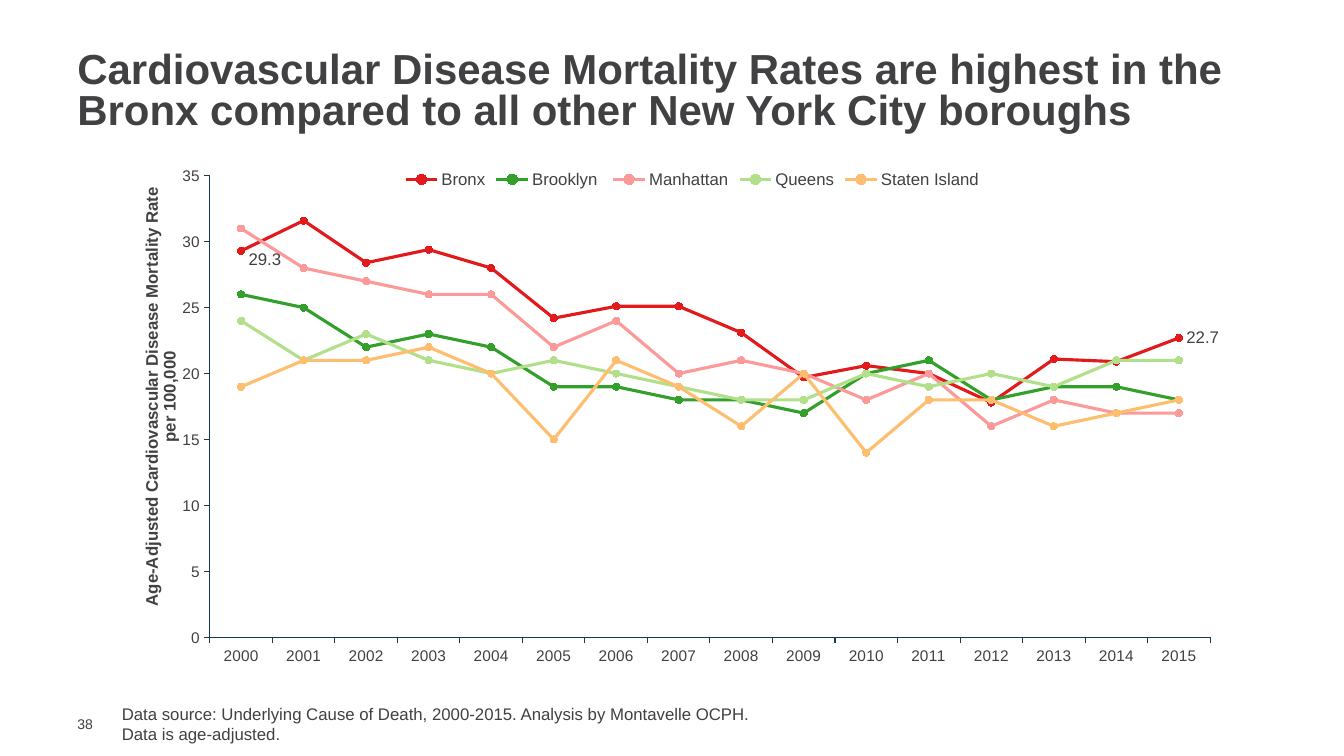
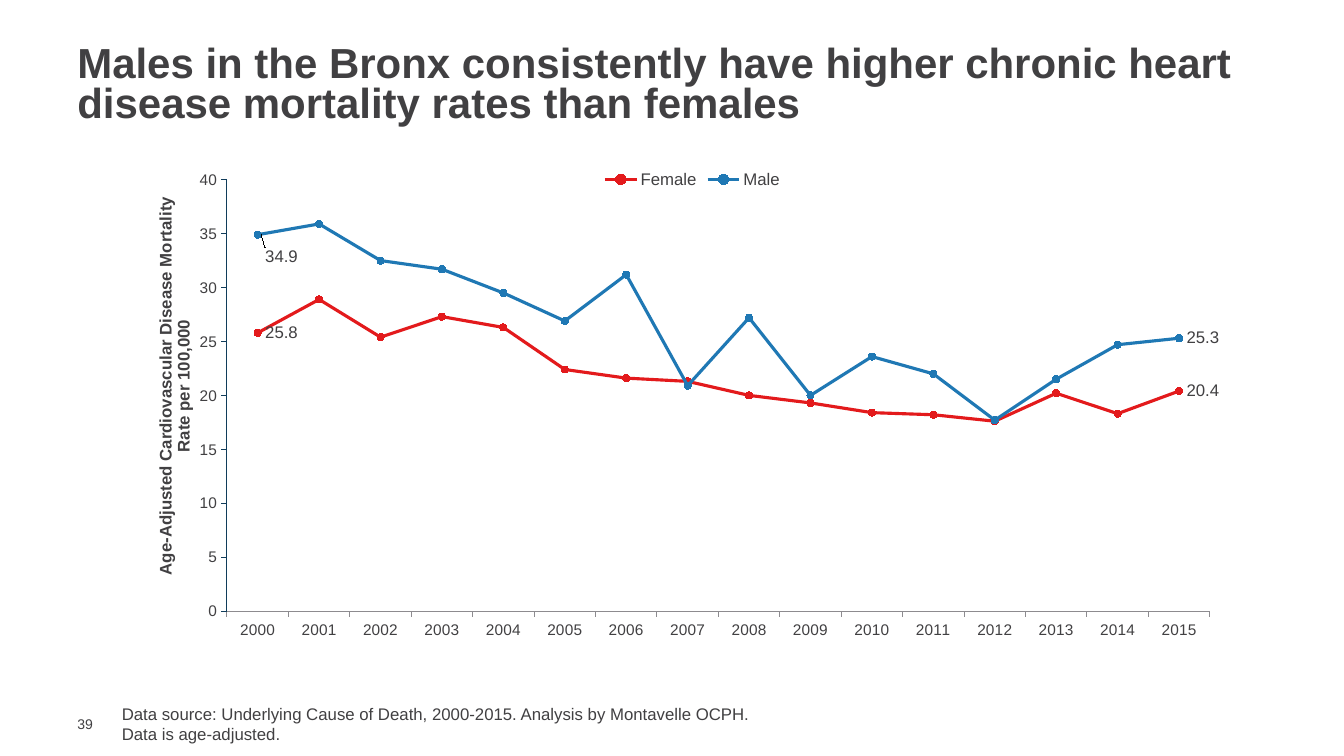
from lxml.etree import SubElement
from pptx import Presentation
from pptx.chart.data import CategoryChartData as ChartData
from pptx.dml.color import RGBColor
from pptx.enum.chart import (XL_CHART_TYPE as Kind, XL_LABEL_POSITION as Side,
                             XL_LEGEND_POSITION as Spot, XL_MARKER_STYLE as Mark,
                             XL_TICK_MARK as Tick)
from pptx.enum.text import MSO_ANCHOR as Anchor
from pptx.oxml.ns import qn
from pptx.util import Cm, Pt

FONT = "Arial"
HUES = {
    "text": "414042", "navy": "103C5A", "gray": "8D8B8F",
    "red": "E31A1C", "green": "33A02C", "pink": "FB9A99",
    "lime": "B2DF8A", "sand": "FDBF6F", "blue": "1F78B4",
}
C15 = "http://schemas.microsoft.com/office/drawing/2012/chart"
LEADER = "{CE6537A1-D6FC-4f65-9D91-7224C49458BB}"
YEARS = [str(year) for year in range(2000, 2016)]
NOTE = ["Data source: Underlying Cause of Death, 2000-2015. Analysis by Montavelle OCPH.",
        "Data is age-adjusted."]
RATE = "Age-Adjusted Cardiovascular Disease Mortality Rate per 100,000"

# Boxes are left, top, width, height in cm; "plot" and "rate" (the axis title)
# are measured from the chart's corner.
# "tags" maps a series to the downward shift of its first label, in cm.
SLIDES = [
    {
        "page": 38,
        "title": "Cardiovascular Disease Mortality Rates are highest in the "
                 "Bronx compared to all other New York City boroughs",
        "head": (1.7, 1.19, 30.48, 2.31),
        "box": (3.38, 4.01, 28.14, 13.54),
        "plot": (1.91, 0.42, 25.21, 11.63),
        "rate": (0.1, 0.63),
        "top": 35, "base": "navy",
        "lines": [
            ("Bronx", "red", [29.3, 31.6, 28.4, 29.4, 28, 24.2, 25.1, 25.1,
                              23.1, 19.7, 20.6, 20, 17.8, 21.1, 20.9, 22.7]),
            ("Brooklyn ", "green", [26, 25, 22, 23, 22, 19, 19, 18,
                                    18, 17, 20, 21, 18, 19, 19, 18]),
            ("Manhattan", "pink", [31, 28, 27, 26, 26, 22, 24, 20,
                                   21, 20, 18, 20, 16, 18, 17, 17]),
            ("Queens", "lime", [24, 21, 23, 21, 20, 21, 20, 19,
                                18, 18, 20, 19, 20, 19, 21, 21]),
            ("Staten Island", "sand", [19, 21, 21, 22, 20, 15, 21, 19,
                                       16, 20, 14, 18, 18, 16, 17, 18]),
        ],
        "tags": {"Bronx": 0.22},
    },
    {
        "page": 39,
        "title": "Males in the Bronx consistently have higher chronic heart "
                 "disease mortality rates than females",
        "head": (1.7, 1.02, 30.48, 2.31),
        "box": (3.58, 4.01, 27.74, 12.8),
        "plot": (2.14, 0.52, 24.77, 10.87),
        "rate": (0.25, 0.88),
        "top": 40, "base": "gray",
        "lines": [
            ("Female", "red", [25.8, 28.9, 25.4, 27.3, 26.3, 22.4, 21.6, 21.3,
                               20, 19.3, 18.4, 18.2, 17.6, 20.2, 18.3, 20.4]),
            ("Male", "blue", [34.9, 35.9, 32.5, 31.7, 29.5, 26.9, 31.2, 20.9,
                              27.2, 20, 23.6, 22, 17.7, 21.5, 24.7, 25.3]),
        ],
        "tags": {"Female": 0, "Male": 0.56},
    },
]


def hue(name):
    return RGBColor.from_string(HUES[name])


def style(font, size, bold=False):
    font.name, font.size, font.bold = FONT, Pt(size), bold
    font.color.rgb = hue("text")


def write(slide, box, lines, size, bold=False, gap=None, anchor=Anchor.TOP, tight=False):
    frame = slide.shapes.add_textbox(*map(Cm, box)).text_frame
    frame.word_wrap, frame.vertical_anchor = True, anchor
    if tight:
        frame.margin_top = frame.margin_right = frame.margin_bottom = 0
    for i, line in enumerate(lines):
        para = frame.add_paragraph() if i else frame.paragraphs[0]
        if gap:
            para.line_spacing = gap
        run = para.add_run()
        run.text = line
        style(run.font, size, bold)


def place(parent, index, **parts):
    """Put a manual layout into a chart element."""
    for old in parent.findall(qn("c:layout")):
        parent.remove(old)
    layout = SubElement(parent, qn("c:layout"))
    manual = SubElement(layout, qn("c:manualLayout"))
    for key, val in parts.items():
        SubElement(manual, qn("c:" + key)).set("val", str(val))
    parent.insert(index, layout)


def tag(row, shift):
    """Label the first and last point of a series."""
    for i in (0, len(YEARS) - 1):
        label = row.points[i].data_label
        style(label.font, 12)
        label.position = Side.RIGHT
    if shift:
        labels = row._element.find(qn("c:dLbls"))
        place(labels.find(qn("c:dLbl")), 1, x=0, y=shift)
        ext = SubElement(SubElement(labels, qn("c:extLst")), qn("c:ext"),
                         nsmap={"c15": C15}, uri=LEADER)
        SubElement(ext, "{%s}showLeaderLines" % C15).set("val", "1")


def trim(axis, shade):
    axis.has_major_gridlines = False
    axis.major_tick_mark, axis.minor_tick_mark = Tick.OUTSIDE, Tick.NONE
    style(axis.tick_labels.font, 11)
    axis.format.line.color.rgb = hue(shade)
    axis.format.line.width = Pt(0.75)


def draw(slide, item):
    data = ChartData()
    data.categories = YEARS
    for name, _, vals in item["lines"]:
        data.add_series(name, vals)
    chart = slide.shapes.add_chart(Kind.LINE_MARKERS, *map(Cm, item["box"]), data).chart
    wide, high = item["box"][2:]
    style(chart.font, 10)
    chart.has_title = False
    chart.has_legend = True
    chart.legend.position = Spot.TOP
    chart.legend.include_in_layout = False
    style(chart.legend.font, 12)

    trim(chart.category_axis, item["base"])
    axis = chart.value_axis
    trim(axis, "navy")
    axis.minimum_scale, axis.maximum_scale, axis.major_unit = 0, item["top"], 5
    run = axis.axis_title.text_frame.paragraphs[0].add_run()
    run.text = RATE
    style(run.font, 12, True)
    x, y = item["rate"]
    place(axis.axis_title._element, 1, xMode="edge", yMode="edge", x=x / wide, y=y / high)

    plot = chart.plots[0]
    plot.vary_by_categories = False
    for row, (name, shade, _) in zip(plot.series, item["lines"]):
        row.smooth = False
        row.format.line.color.rgb = hue(shade)
        row.format.line.width = Pt(2.25)
        row.marker.style, row.marker.size = Mark.CIRCLE, 5
        row.marker.format.fill.solid()
        row.marker.format.fill.fore_color.rgb = hue(shade)
        row.marker.format.line.color.rgb = hue(shade)
        if name in item["tags"]:
            tag(row, item["tags"][name] / high)
    x, y, w, h = item["plot"]
    place(chart._chartSpace.chart.plotArea, 0, layoutTarget="inner",
          xMode="edge", yMode="edge", x=x / wide, y=y / high, w=w / wide, h=h / high)


def main():
    deck = Presentation()
    deck.slide_width, deck.slide_height = Cm(33.87), Cm(19.05)
    for item in SLIDES:
        slide = deck.slides.add_slide(deck.slide_layouts[6])
        write(slide, (1.7, 18.03, 1.09, 0.43), [str(item["page"])], 10,
              anchor=Anchor.MIDDLE, tight=True)
        write(slide, item["head"], [item["title"]], 30, True, 0.8, Anchor.MIDDLE)
        draw(slide, item)
        write(slide, (2.82, 17.6, 24.66, 1.27), NOTE, 12)
    deck.save("out.pptx")


if __name__ == "__main__":
    main()
